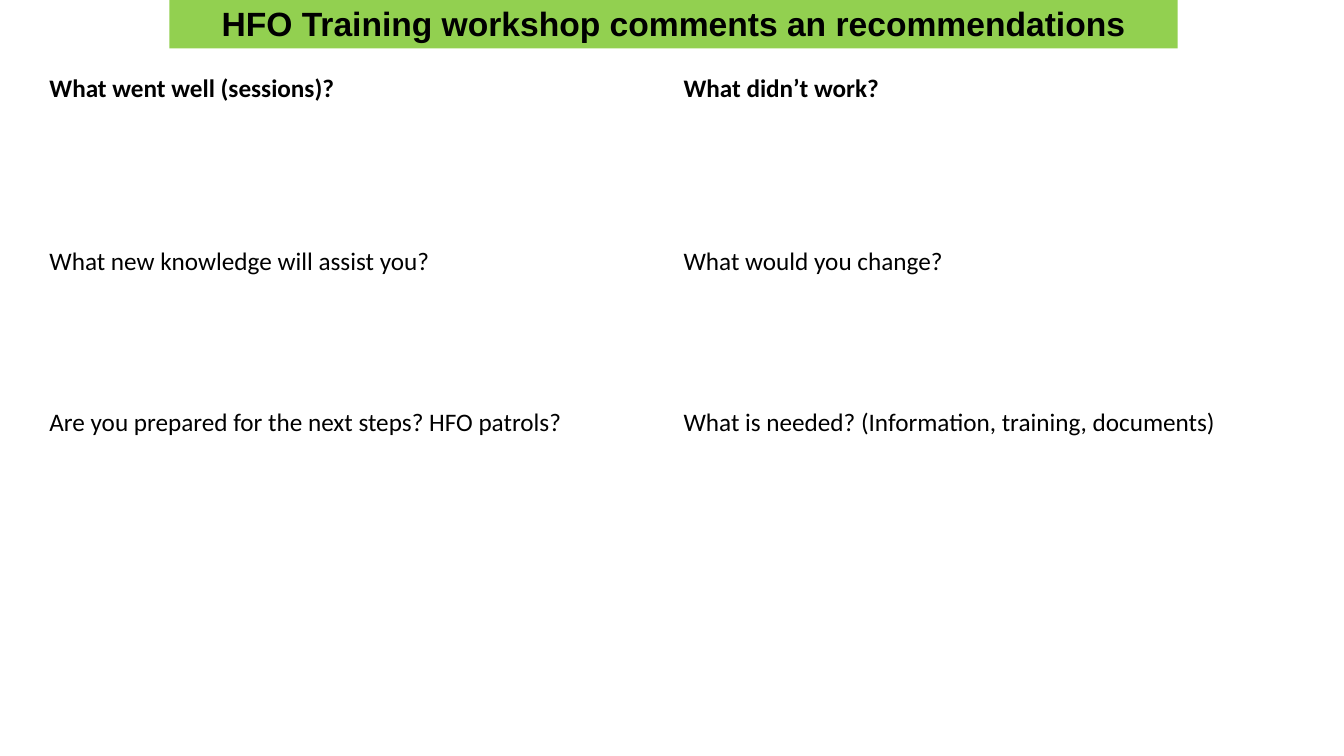
from lxml import etree
from pptx import Presentation
from pptx.dml.color import RGBColor
from pptx.enum.text import MSO_ANCHOR, PP_ALIGN
from pptx.oxml.ns import qn
from pptx.util import Inches, Pt

CENTER = PP_ALIGN.CENTER
MIDDLE = MSO_ANCHOR.MIDDLE
TITLE_ONLY = 5
COLORS = {"banner": "92D050", "text": "000000", "border": "FFFFFF"}
COLUMN_WIDTH = 6.29
ROW_HEIGHTS = [1.42, 1.89, 2.45]
TOP_MARGINS = [0.05, 0.35, 0.05]
QUESTIONS = [
    ("What went well (sessions)?", "What didn’t work?"),
    ("What new knowledge will assist you?", "What would you change?"),
    ("Are you prepared for the next steps? HFO patrols?",
     "What is needed? (Information, training, documents)"),
]


def write(text_frame, text, font_name, size, bold):
    text_frame.text = text
    font = text_frame.paragraphs[0].runs[0].font
    font.name, font.size, font.bold = font_name, Pt(size), bold
    font.color.rgb = RGBColor.from_string(COLORS["text"])


def add_title(page, text):
    title = page.shapes.title
    title.left, title.top = Inches(1.68), Inches(-0.03)
    title.width, title.height = Inches(10), Inches(0.51)
    title.fill.solid()
    title.fill.fore_color.rgb = RGBColor.from_string(COLORS["banner"])
    write(title.text_frame, text, "Arial", 24, True)
    title.text_frame.vertical_anchor = MIDDLE
    title.text_frame.paragraphs[0].alignment = CENTER


def set_borders(cell, bottom_width):
    """Draw 1 pt borders, with a chosen width at the bottom."""
    properties = cell._tc.get_or_add_tcPr()
    widths = {"a:lnL": 1, "a:lnR": 1, "a:lnT": 1, "a:lnB": bottom_width}
    for position, (tag, width) in enumerate(widths.items()):
        line = etree.Element(qn(tag), w=str(Pt(width)))
        fill = etree.SubElement(line, qn("a:solidFill"))
        etree.SubElement(fill, qn("a:srgbClr"), val=COLORS["border"])
        properties.insert(position, line)


def add_question_table(page):
    table = page.shapes.add_table(
        len(QUESTIONS), 2, Inches(0.39), Inches(0.68),
        Inches(2 * COLUMN_WIDTH), Inches(sum(ROW_HEIGHTS))).table
    table.horz_banding = False
    for column in table.columns:
        column.width = Inches(COLUMN_WIDTH)
    for row_index, questions in enumerate(QUESTIONS):
        is_header = row_index == 0
        table.rows[row_index].height = Inches(ROW_HEIGHTS[row_index])
        for column_index, question in enumerate(questions):
            cell = table.cell(row_index, column_index)
            cell.margin_top = Inches(TOP_MARGINS[row_index])
            cell.fill.background()
            set_borders(cell, 3 if is_header else 1)
            write(cell.text_frame, question, "Calibri", 18, is_header)


def main():
    deck = Presentation()
    deck.slide_width, deck.slide_height = Inches(13.33), Inches(7.5)
    page = deck.slides.add_slide(deck.slide_layouts[TITLE_ONLY])
    add_title(page, "HFO Training workshop comments an recommendations")
    add_question_table(page)
    deck.save("out.pptx")


if __name__ == "__main__":
    main()
